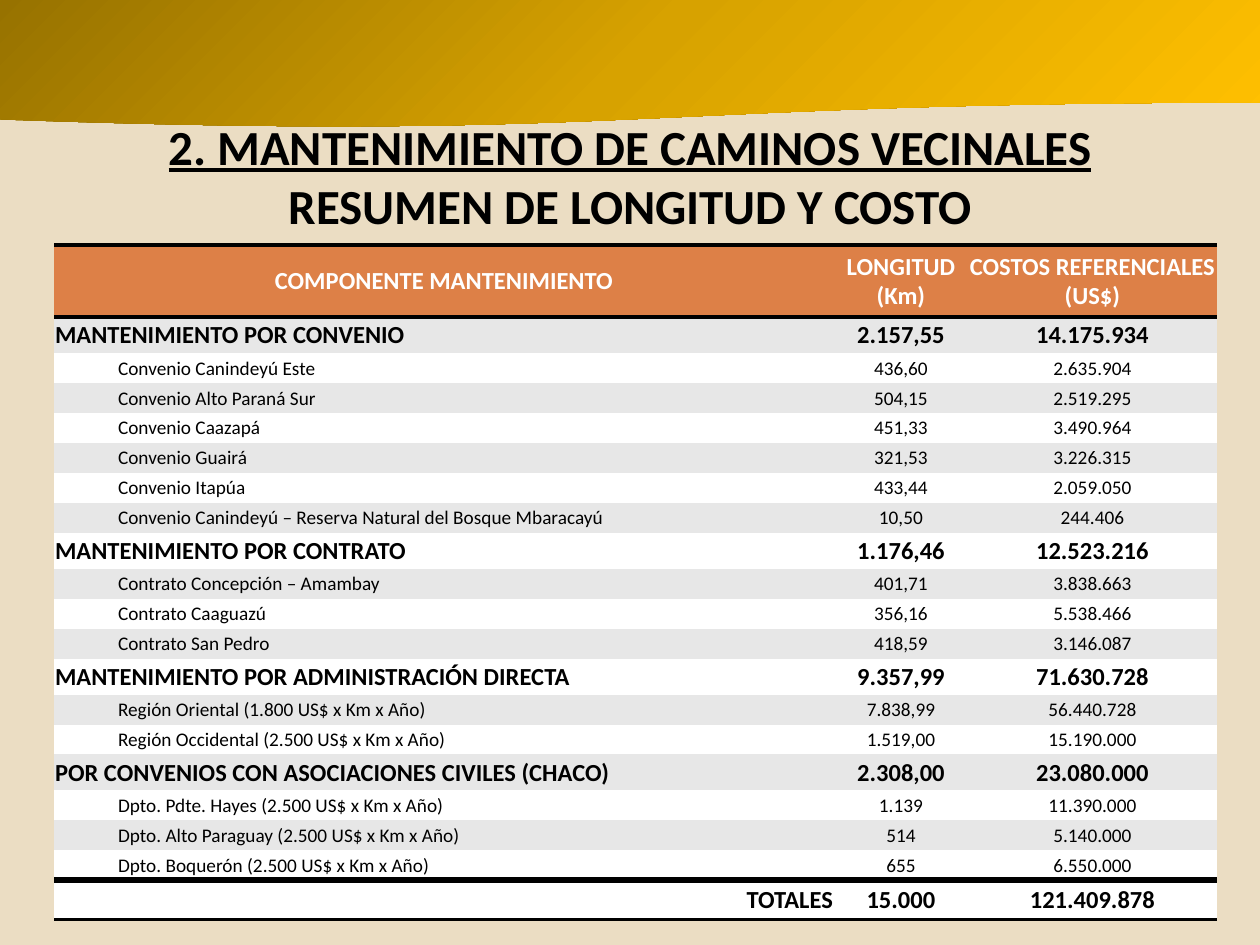
import pptx
import pptx.dml.color
import pptx.enum.shapes
import pptx.enum.text
import pptx.oxml
import pptx.oxml.ns
import pptx.util

PX = 914400 / 126
FONT = "Calibri"
COLORS = {"background": "EBDDC3", "header": "DD8047", "band": "E7E7E7",
          "white": "FFFFFF", "black": "000000"}
WAVE_STOPS = [(0, "977200"), (50, "D7A200"), (100, "FFC000")]
TITLE = ["2. MANTENIMIENTO DE CAMINOS VECINALES", "RESUMEN DE LONGITUD Y COSTO"]
HEADER = ("COMPONENTE MANTENIMIENTO", "LONGITUD\n(Km)", "COSTOS REFERENCIALES (US$)")
GROUPS = [
    (("MANTENIMIENTO POR CONVENIO", "2.157,55", "14.175.934"), [
        ("Convenio Canindeyú Este", "436,60", "2.635.904"),
        ("Convenio Alto Paraná Sur", "504,15", "2.519.295"),
        ("Convenio Caazapá", "451,33", "3.490.964"),
        ("Convenio Guairá", "321,53", "3.226.315"),
        ("Convenio Itapúa", "433,44", "2.059.050"),
        ("Convenio Canindeyú – Reserva Natural del Bosque Mbaracayú", "10,50", "244.406"),
    ]),
    (("MANTENIMIENTO POR CONTRATO", "1.176,46", "12.523.216"), [
        ("Contrato Concepción – Amambay", "401,71", "3.838.663"),
        ("Contrato Caaguazú", "356,16", "5.538.466"),
        ("Contrato San Pedro", "418,59", "3.146.087"),
    ]),
    (("MANTENIMIENTO POR ADMINISTRACIÓN DIRECTA", "9.357,99", "71.630.728"), [
        ("Región Oriental (1.800 US$ x Km x Año)", "7.838,99", "56.440.728"),
        ("Región Occidental (2.500 US$ x Km x Año)", "1.519,00", "15.190.000"),
    ]),
    (("POR CONVENIOS CON ASOCIACIONES CIVILES (CHACO)", "2.308,00", "23.080.000"), [
        ("Dpto. Pdte. Hayes (2.500 US$ x Km x Año)", "1.139", "11.390.000"),
        ("Dpto. Alto Paraguay (2.500 US$ x Km x Año)", "514", "5.140.000"),
        ("Dpto. Boquerón (2.500 US$ x Km x Año)", "655", "6.550.000"),
    ]),
]
TOTALS = ("TOTALES", "15.000", "121.409.878")
COLUMN_WIDTHS = [780, 134, 249]
ROW_HEIGHTS = {"header": 72, "group": 36, "item": 30, "total": 39}
BORDERS = {"header": {"T": 2, "B": 2}, "total": {"T": 4, "B": 2}}
ITEM_INDENT = 63
NO_TABLE_STYLE = "{2D5ABB26-0587-4C30-8999-92F81FD0307C}"
ALIGN = pptx.enum.text.PP_ALIGN
MIDDLE = pptx.enum.text.MSO_ANCHOR.MIDDLE


def px(value):
    return pptx.util.Emu(round(value * PX))


def rgb(name):
    return pptx.dml.color.RGBColor.from_string(COLORS[name])


def parse_drawing(xml):
    return pptx.oxml.parse_xml(xml.replace(">", f" {pptx.oxml.ns.nsdecls('a')}>", 1))


def set_font(font, size, color, bold):
    font.name, font.size, font.bold = FONT, pptx.util.Pt(size), bold
    font.color.rgb = rgb(color)


def add_wave(slide):
    wave = slide.shapes.add_shape(
        pptx.enum.shapes.MSO_SHAPE.FLOWCHART_DOCUMENT, 0, 0, px(1260), px(128))
    wave.shadow.inherit = False
    wave.line.fill.background()
    stops = "".join(f'<a:gs pos="{position * 1000}"><a:srgbClr val="{color}"/></a:gs>'
                    for position, color in WAVE_STOPS)
    gradient = parse_drawing(f'<a:gradFill rotWithShape="1"><a:gsLst>{stops}</a:gsLst>'
                             '<a:lin ang="2700000" scaled="0"/></a:gradFill>')
    wave._element.spPr.find(pptx.oxml.ns.qn("a:prstGeom")).addnext(gradient)


def add_title(slide):
    frame = slide.shapes.add_textbox(px(63), px(96), px(1134), px(158)).text_frame
    frame.word_wrap = True
    frame.vertical_anchor = MIDDLE
    paragraph = frame.paragraphs[0]
    paragraph.alignment = ALIGN.CENTER
    for index, line in enumerate(TITLE):
        if index:
            paragraph.add_line_break()
        run = paragraph.add_run()
        run.text = line
        set_font(run.font, 28, "black", True)
        run.font.underline = index == 0


def add_borders(cell, widths):
    properties = cell._tc.get_or_add_tcPr()
    for index, (side, width) in enumerate(widths.items()):
        properties.insert(index, parse_drawing(
            f'<a:ln{side} w="{width * 12700}"><a:solidFill>'
            f'<a:srgbClr val="{COLORS["black"]}"/></a:solidFill></a:ln{side}>'))


def fill_cell(cell, text, kind, column, fill):
    cell.text = text
    cell.vertical_anchor = MIDDLE
    cell.margin_left = cell.margin_right = cell.margin_top = px(1)
    cell.margin_bottom = 0
    cell.fill.solid()
    cell.fill.fore_color.rgb = rgb(fill)
    add_borders(cell, BORDERS.get(kind, {}))
    for paragraph in cell.text_frame.paragraphs:
        if column or kind == "header":
            paragraph.alignment = ALIGN.CENTER
        else:
            paragraph.alignment = ALIGN.RIGHT if kind == "total" else ALIGN.LEFT
            if kind == "item":
                paragraph._p.get_or_add_pPr().set("marL", str(px(ITEM_INDENT)))
        set_font(paragraph.font, 11 if kind == "item" else 14,
                 "white" if kind == "header" else "black", kind != "item")


def add_cost_table(slide):
    rows = [("header", HEADER)]
    for group, items in GROUPS:
        rows.append(("group", group))
        rows += [("item", item) for item in items]
    rows.append(("total", TOTALS))

    height = sum(ROW_HEIGHTS[kind] for kind, _ in rows)
    table = slide.shapes.add_table(len(rows), len(COLUMN_WIDTHS), px(54), px(245),
                                   px(sum(COLUMN_WIDTHS)), px(height)).table
    table.first_row = table.horz_banding = False
    table._tbl.tblPr.find(pptx.oxml.ns.qn("a:tableStyleId")).text = NO_TABLE_STYLE
    for column, width in enumerate(COLUMN_WIDTHS):
        table.columns[column].width = px(width)
    for index, (kind, texts) in enumerate(rows):
        table.rows[index].height = px(ROW_HEIGHTS[kind])
        banded = "band" if index % 2 else "white"
        fill = {"header": "header", "total": "white"}.get(kind, banded)
        for column, text in enumerate(texts):
            fill_cell(table.cell(index, column), text, kind, column, fill)


def main():
    presentation = pptx.Presentation()
    presentation.slide_width, presentation.slide_height = px(1260), px(945)
    slide = presentation.slides.add_slide(presentation.slide_layouts[6])
    slide.background.fill.solid()
    slide.background.fill.fore_color.rgb = rgb("background")
    add_wave(slide)
    add_title(slide)
    add_cost_table(slide)
    presentation.save("out.pptx")


if __name__ == "__main__":
    main()
